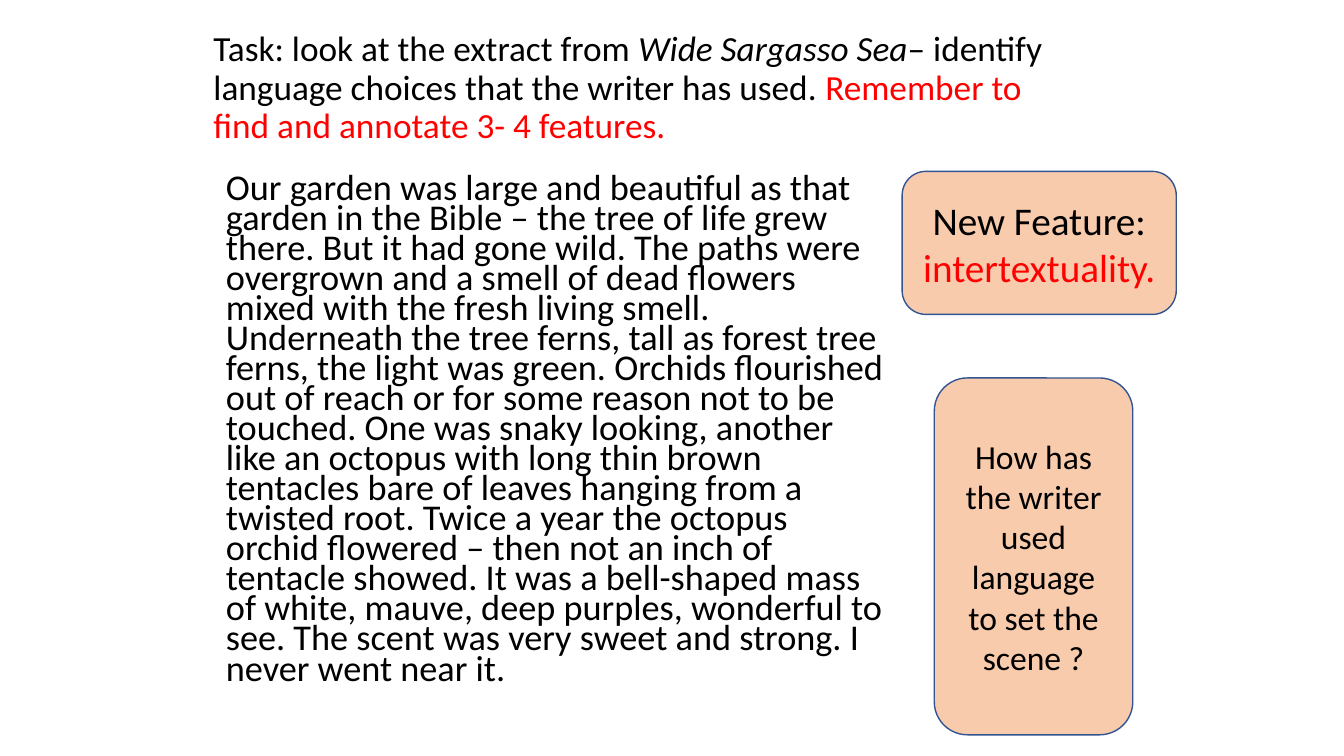
from pptx import Presentation
from pptx.dml.color import RGBColor
from pptx.enum import shapes, text
from pptx.util import Pt

BLACK = RGBColor(0, 0, 0)
RED = RGBColor(255, 0, 0)
PEACH = RGBColor(0xF8, 0xCB, 0xAD)
BLUE = RGBColor(0x32, 0x54, 0x91)

EXTRACT = (
    "Our garden was large and beautiful as that garden in the Bible – the tree "
    "of life grew there. But it had gone wild. The paths were overgrown and a "
    "smell of dead flowers mixed with the fresh living smell. Underneath the "
    "tree ferns, tall as forest tree ferns, the light was green. Orchids "
    "flourished out of reach or for some reason not to be touched. One was "
    "snaky looking, another like an octopus with long thin brown tentacles bare "
    "of leaves hanging from a twisted root. Twice a year the octopus orchid "
    "flowered – then not an inch of tentacle showed. It was a bell-shaped mass "
    "of white, mauve, deep purples, wonderful to see. The scent was very sweet "
    "and strong. I never went near it."
)


def write(shape, runs, size, anchor, align, spacing=1.0):
    """Fill the shape with one paragraph of (words, colour, italic) runs."""
    frame = shape.text_frame
    frame.word_wrap = True
    frame.vertical_anchor = anchor
    para = frame.paragraphs[0]
    para.alignment = align
    para.line_spacing = spacing
    para.font.name = "Calibri"
    para.font.size = Pt(size)
    for words, colour, italic in runs:
        run = para.add_run()
        run.text = words
        run.font.color.rgb = colour
        if italic:
            run.font.italic = True


def task(slide, box):
    runs = [
        ("Task: look at the extract from ", BLACK, False),
        ("Wide Sargasso Sea", BLACK, True),
        ("– identify language choices that the writer has used. ", BLACK, False),
        ("Remember to find and annotate 3- 4 features.", RED, False),
    ]
    shape = slide.shapes.add_textbox(*map(Pt, box))
    write(shape, runs, 25.2, text.MSO_ANCHOR.MIDDLE, text.PP_ALIGN.LEFT, 0.9)


def extract(slide, box):
    shape = slide.shapes.add_textbox(*map(Pt, box))
    shape.text_frame.margin_left = Pt(16)
    write(shape, [(EXTRACT, BLACK, False)], 25.9,
          text.MSO_ANCHOR.TOP, text.PP_ALIGN.LEFT, 0.69)


def card(slide, box, runs, size):
    shape = slide.shapes.add_shape(
        shapes.MSO_SHAPE.ROUNDED_RECTANGLE, *map(Pt, box))
    shape.shadow.inherit = False
    shape.fill.solid()
    shape.fill.fore_color.rgb = PEACH
    shape.line.color.rgb = BLUE
    shape.line.width = Pt(1)
    write(shape, runs, size, text.MSO_ANCHOR.MIDDLE, text.PP_ALIGN.CENTER)


def main():
    deck = Presentation()
    deck.slide_width, deck.slide_height = Pt(960), Pt(540)
    slide = deck.slides.add_slide(deck.slide_layouts[6])
    left, top = 145.4, 122.4
    task(slide, (left, 15.1, 610.6, 96.5))
    extract(slide, (left, top, 493.2, 402.5))
    card(slide, (644.4, top, 195.8, 102.2),
         [("New Feature: ", BLACK, False), ("intertextuality.", RED, False)], 28)
    card(slide, (667.4, 270, 141.8, 254.9),
         [("How has the writer used language to set the scene ?", BLACK, False)],
         24)
    deck.save("out.pptx")


if __name__ == "__main__":
    main()
